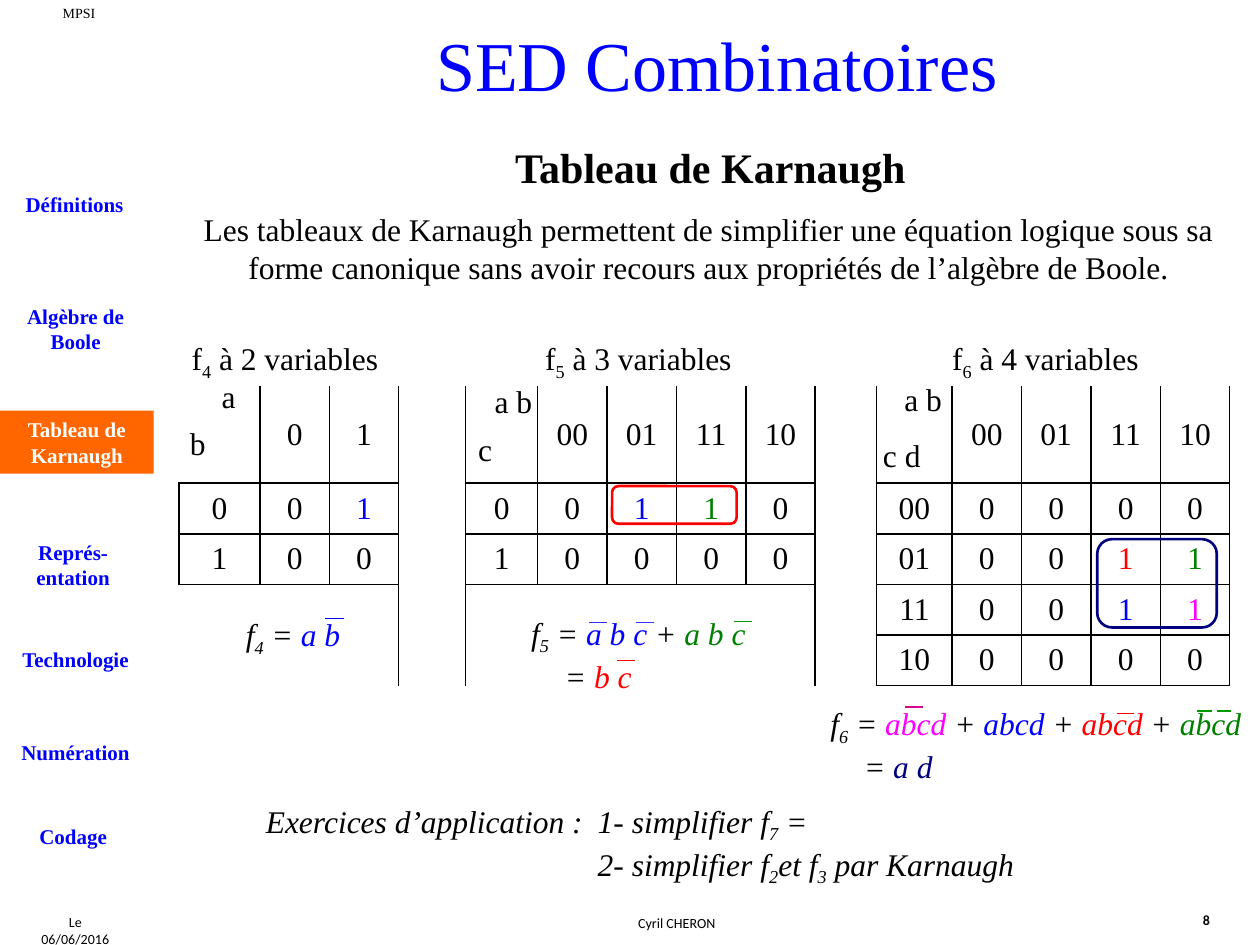
from lxml import etree
from pptx import Presentation
from pptx.dml.color import RGBColor
from pptx.enum.shapes import MSO_CONNECTOR, MSO_SHAPE
from pptx.enum.text import MSO_ANCHOR, MSO_AUTO_SIZE, PP_ALIGN
from pptx.oxml.ns import qn
from pptx.util import Cm, Pt

LEFT, CENTER = PP_ALIGN.LEFT, PP_ALIGN.CENTER
MIDDLE, NO_FIT = MSO_ANCHOR.MIDDLE, MSO_AUTO_SIZE.NONE
RECT, ROUND, STRAIGHT = MSO_SHAPE.RECTANGLE, MSO_SHAPE.ROUNDED_RECTANGLE, MSO_CONNECTOR.STRAIGHT
SERIF, SANS = "Times New Roman", "Calibri"
NO_GRID = "{2D5ABB26-0587-4C30-8999-92F81FD0307C}"
C = {"black": "000000", "white": "FFFFFF", "blue": "0000FF", "green": "008000",
     "red": "FF0000", "pink": "FF00FF", "navy": "000080", "orange": "FF6600",
     "blue bar": "3333FF", "green bar": "009900", "pink bar": "D60093"}


def rgb(name):
    return RGBColor.from_string(C[name])


def style(p, size=18, color="black", bold=False, italic=False, font=SERIF, align=LEFT):
    p.alignment = align
    p.font.name, p.font.size = font, Pt(size)
    p.font.bold, p.font.italic = bold, italic
    p.font.color.rgb = rgb(color)


def add_runs(p, runs):
    for text, *color in runs:
        r = p.add_run()
        if text.startswith("_"):
            text = text[1:]
            r.font._element.set("baseline", "-25000")
        r.text = text
        if color:
            r.font.color.rgb = rgb(color[0])


def text_box(s, box, runs, inset=(0.25, 0.13), wrap=True, **look):
    sp = s.shapes.add_textbox(*map(Cm, box))
    tf = sp.text_frame
    tf.word_wrap = wrap
    tf.margin_left = tf.margin_right = Cm(inset[0])
    tf.margin_top = tf.margin_bottom = Cm(inset[1])
    add_runs(tf.paragraphs[0], [(runs,)] if isinstance(runs, str) else runs)
    style(tf.paragraphs[0], **look)
    return tf


def indented_line(tf, indent, runs, **look):
    p = tf.add_paragraph()
    p._p.get_or_add_pPr().set("marL", str(Cm(indent)))
    add_runs(p, runs)
    style(p, **look)


def outline(s, box, color):
    sp = s.shapes.add_shape(ROUND, *map(Cm, box))
    sp.shadow.inherit = False
    sp.fill.background()
    sp.line.color.rgb = rgb(color)
    sp.line.width = Pt(1.5)


def label_block(s, box, text, fill, **look):
    sp = s.shapes.add_shape(RECT, *map(Cm, box))
    sp.shadow.inherit = False
    sp.fill.solid()
    sp.fill.fore_color.rgb = rgb(fill)
    sp.line.fill.background()
    tf = sp.text_frame
    tf.margin_left = tf.margin_right = tf.margin_top = tf.margin_bottom = Cm(0.1)
    tf.text = text
    style(tf.paragraphs[0], align=CENTER, **look)


def navigation(s, x, y):
    entries = [("Définitions", 0.03, 0), ("Algèbre de Boole", 0.05, 2.26),
               ("Représ-entation", 0, 7.01), ("Technologie", 0.05, 9.17),
               ("Numération", 0.05, 11.05), ("Codage", 0, 12.75)]
    for text, dx, dy in entries:
        text_box(s, (x + dx, y + dy, 2.95, 0.76), text, inset=(0.1, 0.13),
                 size=12, color="blue", bold=True, align=CENTER)
    label_block(s, (x, y + 4.55, 3.1, 1.27), "Tableau de Karnaugh", "orange",
                size=12, color="white", bold=True)


def heading(s, x, y, w):
    title = s.shapes.title
    title.left, title.top, title.width, title.height = map(Cm, (x + 2.66, y, 16.56, 1.96))
    tf = title.text_frame
    tf.auto_size, tf.vertical_anchor = NO_FIT, MIDDLE
    tf.text = "SED Combinatoires"
    style(tf.paragraphs[0], size=40, color="blue", align=CENTER)
    text_box(s, (x, y + 2.42, w, 1.27), "Tableau de Karnaugh",
             size=24, bold=True, align=CENTER)
    text_box(s, (x + 0.05, y + 3.81, w - 0.16, 1.78),
             "Les tableaux de Karnaugh permettent de simplifier une équation logique "
             "sous sa forme canonique sans avoir recours aux propriétés de l’algèbre "
             "de Boole.", align=CENTER)


def border(cell, sides):
    tcPr = cell._tc.get_or_add_tcPr()
    for side in "LRTB":
        if side in sides:
            ln = etree.SubElement(tcPr, qn("a:ln" + side), w=str(Pt(1)))
            fill = etree.SubElement(ln, qn("a:solidFill"))
            etree.SubElement(fill, qn("a:srgbClr"), val=C["black"])


def karnaugh_maps(s, x, y):
    widths = [1.63, 1.4, 1.4, 1.35, 1.45] + [1.4] * 4 + [1.24, 1.52] + [1.4] * 4
    heights = [1.96] * 2 + [1.02] * 4
    frame = s.shapes.add_table(len(heights), len(widths), *map(Cm, (x, y, sum(widths), sum(heights))))
    table = frame.table
    table._tbl.tblPr.find(qn("a:tableStyleId")).text = NO_GRID
    table.first_row = table.horz_banding = False
    for col, w in zip(table.columns, widths):
        col.width = Cm(w)
    for row, h in zip(table.rows, heights):
        row.height = Cm(h)

    maps = [(0, ["|0|1", "0|0|1", "1|0|0"]),
            (4, ["|00|01|11|10", "0|0|1|1|0", "1|0|0|0|0"]),
            (10, ["|00|01|11|10", "00|0|0|0|0", "01|0|0|1|1", "11|0|0|1|1", "10|0|0|0|0"])]
    colors = {(2, 2): "blue", (2, 6): "blue", (2, 7): "green", (3, 13): "red",
              (3, 14): "green", (4, 13): "blue", (4, 14): "pink"}
    left_edges = {(2, 0), (3, 0), (3, 4)}
    for start, lines in maps:
        for r, line in enumerate(lines, 1):
            for c, text in enumerate(line.split("|"), start):
                cell = table.cell(r, c)
                cell.text = text
                cell.vertical_anchor = MIDDLE
                style(cell.text_frame.paragraphs[0], color=colors.get((r, c), "black"), align=CENTER)
                sides = "RB" + ("L" if c > start or (r, c) in left_edges else "")
                border(cell, sides + ("T" if r > 1 else ""))
    for r in range(1, 6):
        for c in (3, 9):
            border(table.cell(r, c), "L")
    for row in table.rows:
        for cell in row.cells:
            cell.fill.background()
    for r1, c1, r2, c2 in [(0, 0, 0, 14), (1, 3, 5, 3), (1, 9, 5, 9),
                           (4, 0, 5, 1), (4, 2, 5, 2), (4, 4, 5, 8)]:
        table.cell(r1, c1).merge(table.cell(r2, c2))

    captions = [("4", "2", -0.1, 4.47, ("a", 0.61, -0.3), ("b", -0.03, 0.64)),
                ("5", "3", 0.05, 6.86, ("a b", 0.33, -0.2), ("c", 0, 0.76)),
                ("6", "4", -0.3, 7.39, ("a b", 0.3, -0.25), ("c d", -0.13, 0.89))]
    top = y + heights[0]
    for (start, _), (index, count, dx, w, *corners) in zip(maps, captions):
        left = x + sum(widths[:start])
        text_box(s, (left + dx, top - 1.07, w, 1.02),
                 [("f",), ("_" + index,), (f" à {count} variables",)], align=CENTER)
        for text, cx, cy in corners:
            text_box(s, (left + cx, top + cy, 1.57, 1.02), text)
    outline(s, (x + 18.51, y + 5.05, 2.41, 1.78), "navy")
    outline(s, (x + 8.73, y + 3.98, 2.51, 0.76), "red")


def formula(s, box, index, terms, bars, result=None, width=0.5, inset=(0.25, 0.13), align=LEFT):
    tf = text_box(s, box, [("f",), ("_" + index,), (" = ",), *terms],
                  inset=inset, italic=True, align=align)
    if result:
        indented_line(tf, 0.68, [("= ",), result], italic=True)
    for dx, dy, length, color in bars:
        x, y = Cm(box[0] + dx), Cm(box[1] + dy)
        line = s.shapes.add_connector(STRAIGHT, x, y, x + Cm(length), y)
        line.line.color.rgb = rgb(color)
        line.line.width = Pt(width)
        etree.SubElement(line._element.spPr, qn("a:effectLst"))


def exercises(s, box):
    tf = text_box(s, box, [], wrap=False)
    p = tf.paragraphs[0]
    tabs = etree.SubElement(p._p.get_or_add_pPr(), qn("a:tabLst"))
    p._p.pPr.remove(p._p.pPr.find(qn("a:defRPr")))
    etree.SubElement(tabs, qn("a:tab"), pos=str(Cm(6.69)), algn="l")
    add_runs(p, [("Exercices d’application :\t1- simplifier f",), ("_7",), (" =",)])
    style(p, italic=True)
    indented_line(tf, 6.69, [("2- simplifier f",), ("_2",), ("et f",), ("_3",),
                             (" par Karnaugh",)], italic=True)


def page_marks(s, y):
    label_block(s, (0.81, 0.1, 1.57, 0.33), "MPSI", "white", size=8)
    text_box(s, (0.43, y, 2.18, 0.61), "Le 06/06/2016", wrap=False,
             size=8, font=SANS, align=CENTER)
    text_box(s, (3.18, y + 0.02, 20.93, 0.61), "Cyril CHERON", size=8, font=SANS, align=CENTER)
    text_box(s, (24, y - 0.05, 0.99, 0.61), "8", wrap=False, size=8, font=SANS, bold=True)


def main():
    prs = Presentation()
    prs.slide_width, prs.slide_height = Cm(25.4), Cm(19.05)
    s = prs.slides.add_slide(prs.slide_layouts[5])
    page_marks(s, 18.29)
    navigation(s, 0, 3.73)
    heading(s, 3.51, 0.3, 21.62)
    karnaugh_maps(s, 3.61, 5.82)
    formula(s, (4.22, 12.27, 3.38, 0.81), "4", [("a b", "blue")],
            [(2.34, 0.2, 0.38, "blue")], align=CENTER)
    formula(s, (10.46, 12.24, 5.18, 2.59), "5",
            [("a b c ", "blue"), ("+ ",), ("a b c", "green")],
            [(1.98, 1.07, 0.36, "red"), (1.42, 0.3, 0.36, "blue bar"),
             (2.36, 0.3, 0.36, "blue bar"), (4.34, 0.28, 0.36, "green bar")], ("b c", "red"))
    formula(s, (16.74, 14.2, 9.22, 2.74), "6",
            [("abcd", "pink"), (" + ",), ("abcd", "blue"), (" + ",),
             ("abcd", "red"), (" + ",), ("abcd", "green")],
            [(1.5, 0.05, 0.36, "pink bar"), (5.77, 0.18, 0.36, "red"),
             (7.39, 0.13, 0.3, "green bar"), (7.8, 0.13, 0.28, "green bar")],
            ("a d", "navy"), width=0.75, inset=(0, 0))
    exercises(s, (5.11, 16.03, 15.62, 1.78))
    prs.save("out.pptx")


if __name__ == "__main__":
    main()
